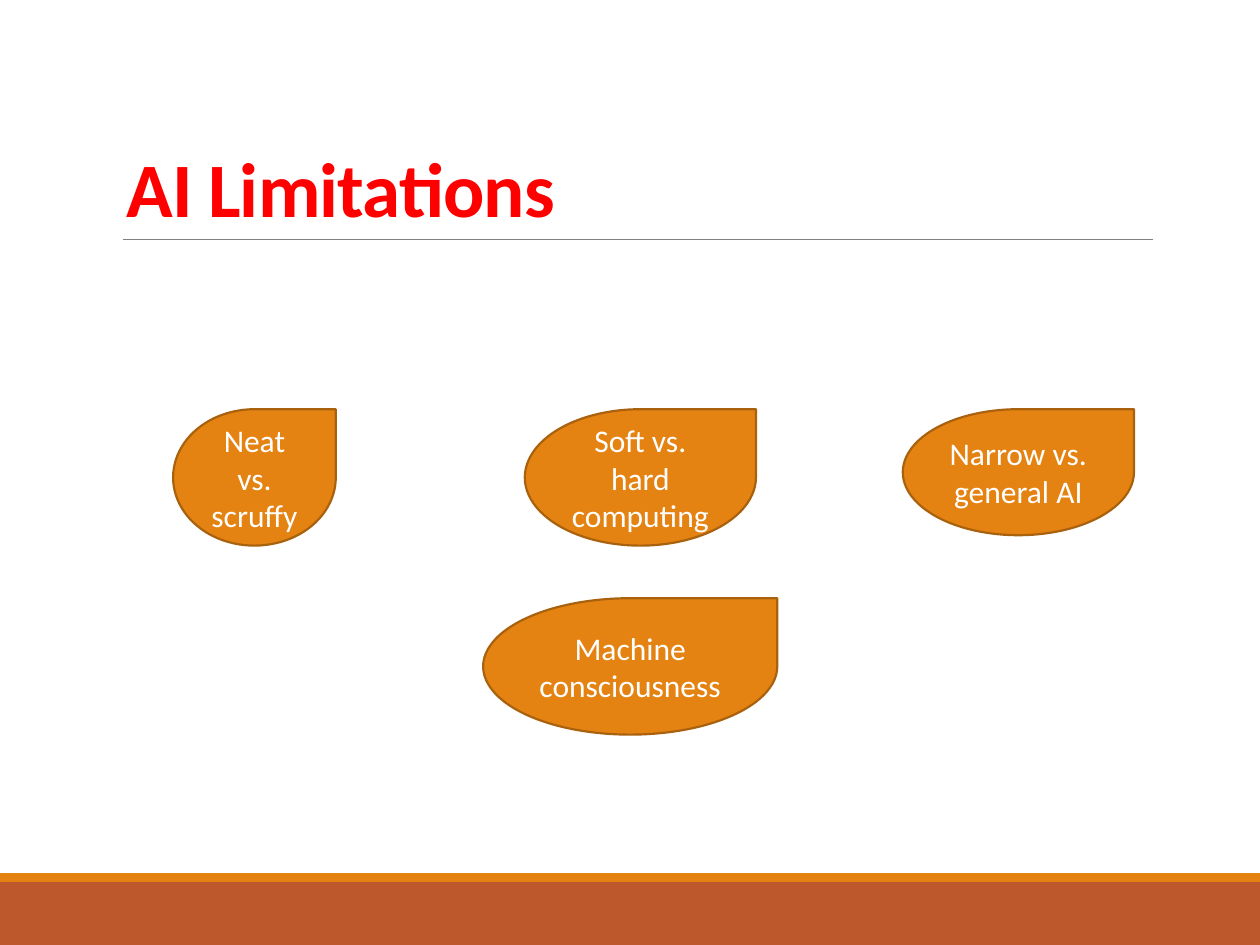
from lxml import etree
from pptx import Presentation
from pptx.dml.color import RGBColor
from pptx.enum import shapes, text
from pptx.oxml.ns import qn
from pptx.util import Cm, Pt

ORANGE = RGBColor(0xE4, 0x83, 0x12)
RUST = RGBColor(0xBD, 0x58, 0x2C)
BROWN = RGBColor(0xA9, 0x61, 0x0D)
GRAY = RGBColor(0x80, 0x80, 0x80)
RED = RGBColor(0xFF, 0x00, 0x00)
WHITE = RGBColor(0xFF, 0xFF, 0xFF)

prs = Presentation()
prs.slide_width, prs.slide_height = Cm(25.4), Cm(19.05)
slide = prs.slides.add_slide(prs.slide_layouts[5])


def add_filled(preset, left, top, width, height, color):
    shape = slide.shapes.add_shape(preset, Cm(left), Cm(top), Cm(width), Cm(height))
    shape.shadow.inherit = False
    shape.fill.solid()
    shape.fill.fore_color.rgb = color
    return shape


# Footer bands
for top, height, color in [(17.78, 1.27, RUST), (17.6, 0.18, ORANGE)]:
    band = add_filled(shapes.MSO_SHAPE.RECTANGLE, 0, top, 25.4, height, color)
    band.line.fill.background()

# Title and the rule below it
rule = slide.shapes.add_connector(
    shapes.MSO_CONNECTOR.STRAIGHT, Cm(2.48), Cm(4.83), Cm(23.24), Cm(4.83))
rule.line.color.rgb = GRAY
rule.line.width = Pt(0.5)
etree.SubElement(rule._element.spPr, qn("a:effectLst"))

title = slide.shapes.title
title.left, title.top, title.width, title.height = Cm(2.29), Cm(0.79), Cm(20.96), Cm(4.04)
title.text_frame.text = "AI Limitations"
title.text_frame.auto_size = text.MSO_AUTO_SIZE.NONE
title.text_frame.vertical_anchor = text.MSO_ANCHOR.BOTTOM
heading = title.text_frame.paragraphs[0]
heading.alignment = text.PP_ALIGN.LEFT
heading.line_spacing = 0.85
heading.font.name = "Calibri"
heading.font.size = Pt(44)
heading.font.bold = True
heading.font.color.rgb = RED
heading.runs[0]._r.get_or_add_rPr().set("spc", "-50")

# Limitations: label, left, top, width, height
limitations = [
    ("Neat vs. scruffy", 3.49, 8.25, 3.28, 2.75),
    ("Soft vs. hard computing", 10.58, 8.25, 4.66, 2.75),
    ("Narrow vs. general AI", 18.2, 8.25, 4.66, 2.54),
    ("Machine consciousness", 9.74, 12.06, 5.93, 2.75),
]
for label, *box in limitations:
    drop = add_filled(shapes.MSO_SHAPE.TEAR, *box, ORANGE)
    drop.line.color.rgb = BROWN
    drop.line.width = Pt(1.25)
    drop.text_frame.text = label
    drop.text_frame.word_wrap = True
    drop.text_frame.vertical_anchor = text.MSO_ANCHOR.MIDDLE
    caption = drop.text_frame.paragraphs[0]
    caption.alignment = text.PP_ALIGN.CENTER
    caption.font.name = "Calibri"
    caption.font.size = Pt(18)
    caption.font.color.rgb = WHITE

prs.save("out.pptx")
